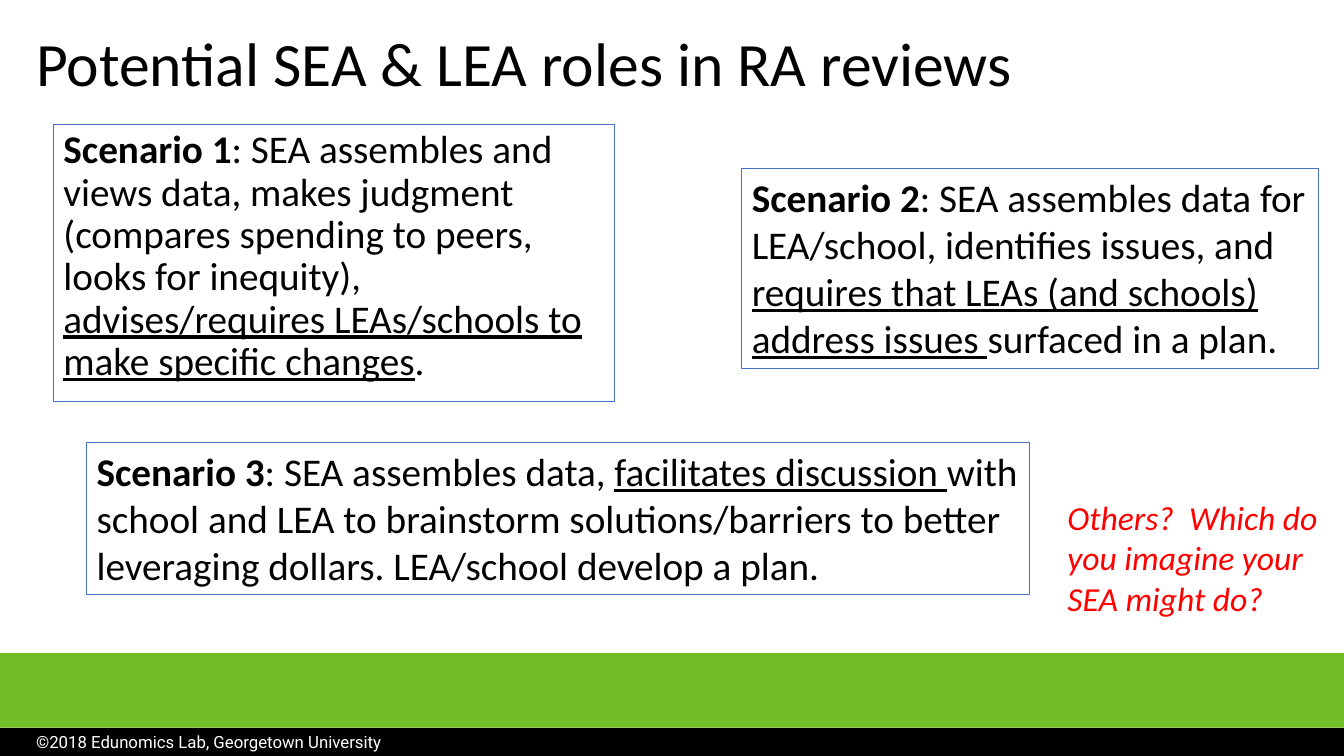
from pptx import Presentation
from pptx.dml.color import RGBColor
from pptx.enum.shapes import MSO_SHAPE
from pptx.enum.text import MSO_ANCHOR
from pptx.util import Inches, Pt

RECTANGLE = MSO_SHAPE.RECTANGLE
TOP, MIDDLE = MSO_ANCHOR.TOP, MSO_ANCHOR.MIDDLE

# The grid has 100 columns and 100 rows.
WIDTH, HEIGHT = Inches(13.333), Inches(7.5)
COLUMN, ROW = WIDTH / 100, HEIGHT / 100

BLACK, WHITE, RED = "000000", "FFFFFF", "FF0000"
GREEN, BORDER_BLUE = "72BE26", "4472C4"

# Grid position, line spacing, and the four parts of each scenario:
# bold label, plain opening, underlined role, plain ending.
SCENARIOS = [
    ((3.98, 16.53, 41.78, 36.53), 0.9,
     ("Scenario 1",
      ": SEA assembles and views data, makes judgment (compares spending "
      "to peers, looks for inequity), ",
      "advises/requires LEAs/schools to make specific changes",
      ".")),
    ((55.2, 22.27, 42.9, 26.53), 1.0,
     ("Scenario 2",
      ": SEA assembles data for LEA/school, identifies issues, and ",
      "requires that LEAs (and schools) address issues ",
      "surfaced in a plan.")),
    ((6.45, 58.53, 70.13, 20.13), 1.0,
     ("Scenario 3",
      ": SEA assembles data, ",
      "facilitates discussion ",
      "with school and LEA to brainstorm solutions/barriers to better "
      "leveraging dollars. LEA/school develop a plan.")),
]


def rgb(color):
    return RGBColor.from_string(color)


def on_grid(left, top, width, height):
    """Turn columns and rows into slide lengths."""
    return (round(left * COLUMN), round(top * ROW),
            round(width * COLUMN), round(height * ROW))


def add_run(paragraph, text, size, color=BLACK, font="Calibri",
            bold=False, italic=False, underline=False):
    run = paragraph.add_run()
    run.text = text
    run.font.name = font
    run.font.size = Pt(size)
    run.font.color.rgb = rgb(color)
    run.font.bold = bold
    run.font.italic = italic
    run.font.underline = underline


def add_text_area(slide, position, spacing=1.0, anchor=TOP):
    """Add a wrapping text box; return it with its first paragraph."""
    area = slide.shapes.add_textbox(*on_grid(*position))
    frame = area.text_frame
    frame.word_wrap = True
    frame.vertical_anchor = anchor
    paragraph = frame.paragraphs[0]
    paragraph.line_spacing = spacing
    return area, paragraph


def add_band(slide, top, height, color):
    band = slide.shapes.add_shape(RECTANGLE, *on_grid(0, top, 100, height))
    band.shadow.inherit = False
    band.fill.solid()
    band.fill.fore_color.rgb = rgb(color)
    band.line.fill.background()


def add_label(slide, position, text, size, spacing=1.0, anchor=TOP, **style):
    paragraph = add_text_area(slide, position, spacing, anchor)[1]
    add_run(paragraph, text, size, **style)


def add_scenario(slide, position, spacing, parts):
    box, paragraph = add_text_area(slide, position, spacing)
    box.line.color.rgb = rgb(BORDER_BLUE)
    box.line.width = Pt(0.75)
    label, opening, role, ending = parts
    add_run(paragraph, label, 28, bold=True)
    add_run(paragraph, opening, 28)
    add_run(paragraph, role, 28, underline=True)
    add_run(paragraph, ending, 28)


def main():
    presentation = Presentation()
    presentation.slide_width, presentation.slide_height = WIDTH, HEIGHT
    slide = presentation.slides.add_slide(presentation.slide_layouts[6])

    add_label(slide, (1.95, -0.8, 86.25, 19.33),
              "Potential SEA & LEA roles in RA reviews", 44,
              spacing=0.9, anchor=MIDDLE)
    add_band(slide, 96.27, 3.73, BLACK)
    add_label(slide, (1.95, 96.13, 46.35, 4),
              "©2018 Edunomics Lab, Georgetown University", 12,
              color=WHITE, font="Roboto")
    add_band(slide, 86.4, 9.87, GREEN)
    add_label(slide, (78.68, 65.07, 21.3, 17.47),
              "Others?  Which do you imagine your SEA might do?", 24,
              color=RED, italic=True)
    for position, spacing, parts in SCENARIOS:
        add_scenario(slide, position, spacing, parts)

    presentation.save("out.pptx")


if __name__ == "__main__":
    main()
